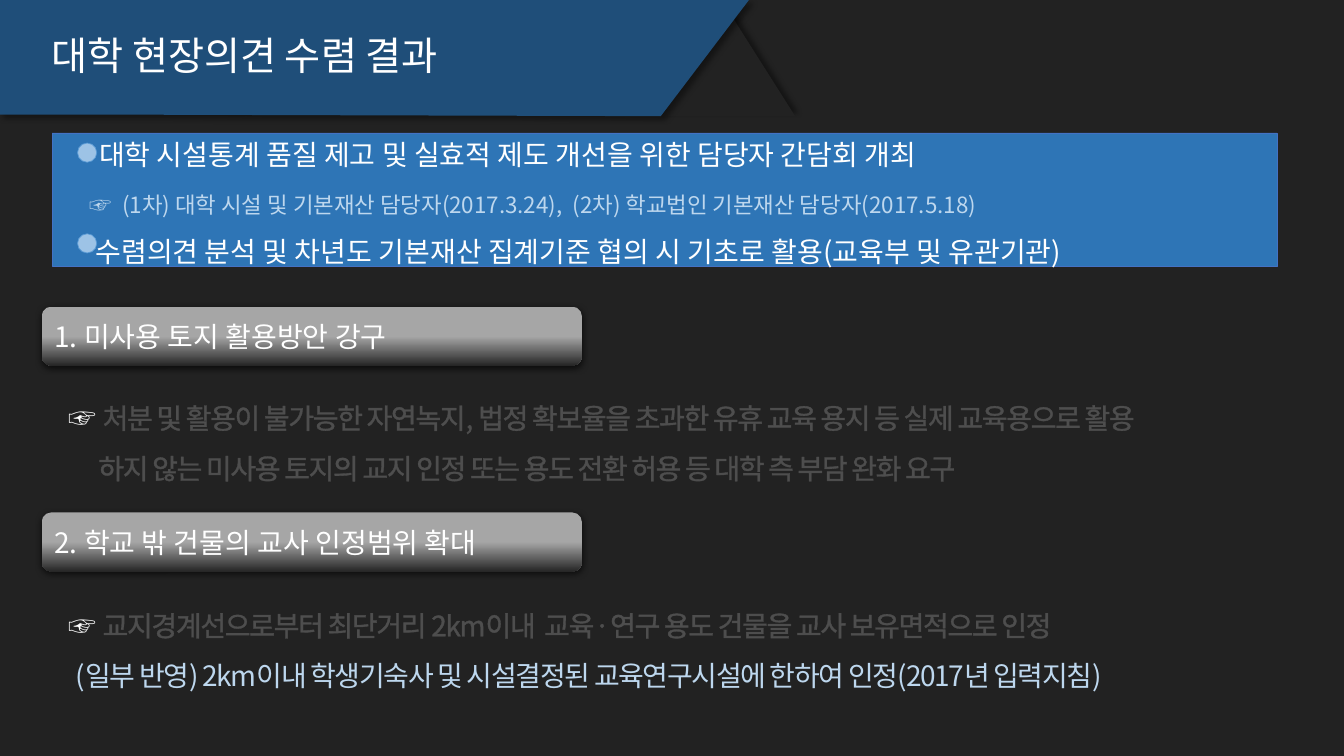
from dataclasses import dataclass
from lxml.etree import SubElement as Sub
from pptx import Presentation
from pptx.dml.color import RGBColor as RGB
from pptx.enum.shapes import MSO_SHAPE as Kind
from pptx.enum.text import MSO_ANCHOR as Anchor, MSO_AUTO_SIZE as Auto, PP_ALIGN as Align
from pptx.oxml.ns import qn
from pptx.util import Pt


@dataclass(frozen=True)
class Theme:
    font: str = "Noto Sans CJK KR"
    back: str = "222222"
    navy: str = "1F4E79"
    blue: str = "2E75B6"
    edge: str = "4472C4"
    dot: str = "9DC3E6"
    rim: str = "5B9BD5"
    pale: str = "BDD7EE"
    white: str = "FFFFFF"
    halo: str = "F2F2F2"
    gray: str = "A6A6A6"
    dark: str = "262626"
    head: int = 28
    body: int = 20
    note: int = 16


T = Theme()


def rgb(code):
    return RGB.from_string(code)


def tint(parent, code, alpha):
    color = Sub(parent, qn("a:srgbClr"), val=code)
    Sub(color, qn("a:alpha"), val=str(alpha * 1000))


def write(para, text, size=T.body, color=T.white, halo=False):
    """Add one run, optionally tight and with a faint outline."""
    run = para.add_run()
    run.text = text
    font = run.font
    font.size, font.name = Pt(size), T.font
    font.color.rgb = rgb(color)
    props = run._r.get_or_add_rPr()
    Sub(props, qn("a:ea"), typeface=T.font)
    if halo:
        props.set("spc", "-100")
        line = Sub(props, qn("a:ln"), w=str(Pt(0.75)))
        tint(Sub(line, qn("a:solidFill")), T.halo, 20)
        props.insert(0, line)


def lay(para, indent=0, space=1.0, before=0):
    para.alignment = Align.LEFT
    para.line_spacing = space
    para.space_before = Pt(before)
    para._p.get_or_add_pPr().set("marL", str(Pt(indent)))
    para._p.get_or_add_pPr().set("indent", "0")
    return para


def paint(shape, fill, line=None):
    shape.shadow.inherit = False
    if fill:
        shape.fill.solid()
        shape.fill.fore_color.rgb = rgb(fill)
    if line:
        shape.line.color.rgb = rgb(line)
        shape.line.width = Pt(0.5)
    else:
        shape.line.fill.background()


def shade(shape, alpha, blur, dist, angle):
    effects = shape._element.spPr.find(qn("a:effectLst"))
    cast = Sub(effects, qn("a:outerShdw"), blurRad=str(Pt(blur)), dist=str(Pt(dist)),
               dir=str(angle * 60000), algn="ctr", rotWithShape="0")
    tint(cast, "000000", alpha)


def place(slide, kind, x, y, w, h):
    return slide.shapes.add_shape(kind, Pt(x), Pt(y), Pt(w), Pt(h))


def banner(slide):
    fold = place(slide, Kind.ISOSCELES_TRIANGLE, 473, 8, 95, 75)
    paint(fold, T.back)
    shade(fold, 40, 4, 3, 315)
    pen = slide.shapes.build_freeform(0, 0, Pt(1))
    pen.add_line_segments([(535, 0), (472, 83), (112, 82), (0, 82)], close=True)
    flag = pen.convert_to_shape()
    paint(flag, T.navy)
    shade(flag, 40, 4, 3, 45)


def title(slide, text):
    head = slide.shapes.title
    head.left, head.top, head.width, head.height = Pt(29.5), Pt(18.7), Pt(335), Pt(41)
    frame = head.text_frame
    frame.word_wrap, frame.auto_size = False, Auto.SHAPE_TO_FIT_TEXT
    frame.vertical_anchor = Anchor.TOP
    write(lay(frame.paragraphs[0]), text, size=T.head)
    # Bring the title in front of the banner
    slide.shapes._spTree.append(head._element)


def summary(slide, rows):
    box = place(slide, Kind.RECTANGLE, 37.2, 95, 875, 95)
    paint(box, T.blue, T.edge)
    frame = box.text_frame
    frame.word_wrap, frame.vertical_anchor = True, Anchor.MIDDLE
    for i, (text, look, form) in enumerate(rows):
        para = frame.add_paragraph() if i else frame.paragraphs[0]
        write(lay(para, **form), text, **look)
    for y in (102.2, 167):
        dot = place(slide, Kind.FLOWCHART_CONNECTOR, 55.4, y, 13.7, 13.7)
        paint(dot, T.dot, T.rim)


def label(slide, y, text):
    bar = place(slide, Kind.ROUNDED_RECTANGLE, 29.7, y, 386, 42.3)
    paint(bar, None)
    bar.fill.gradient()
    bar.fill.gradient_angle = 270
    for stop, spot, code in zip(bar.fill.gradient_stops, (0.5, 1), (T.gray, T.dark)):
        stop.position, stop.color.rgb = spot, rgb(code)
    shade(bar, 63, 4.5, 1.5, 90)
    frame = bar.text_frame
    frame.word_wrap, frame.vertical_anchor = True, Anchor.MIDDLE
    write(lay(frame.paragraphs[0]), text)


def detail(slide, y, h, first, second, indent, color=T.white):
    box = slide.shapes.add_textbox(Pt(37.2), Pt(y), Pt(875), Pt(h))
    frame = box.text_frame
    frame.word_wrap, frame.auto_size = True, Auto.SHAPE_TO_FIT_TEXT
    para = lay(frame.paragraphs[0], indent=4.5, space=1.5)
    write(para, "☞ ")
    write(para, first, halo=True)
    para = lay(frame.add_paragraph(), indent=indent, space=1.5)
    write(para, second, color=color, halo=True)


def main():
    deck = Presentation()
    deck.slide_width, deck.slide_height = Pt(960), Pt(540)
    slide = deck.slides.add_slide(deck.slide_layouts[5])
    slide.background.fill.solid()
    slide.background.fill.fore_color.rgb = rgb(T.back)

    # Heading
    banner(slide)
    title(slide, "대학 현장의견 수렴 결과")

    # Overview box
    summary(slide, [
        ("대학 시설통계 품질 제고 및 실효적 제도 개선을 위한 담당자 간담회 개최",
         {}, dict(indent=26.5, space=1.2)),
        ("☞  (1차) 대학 시설 및 기본재산 담당자(2017.3.24),  (2차) 학교법인 기본재산 담당자(2017.5.18)",
         dict(size=T.note, color=T.pale), dict(indent=20, space=1.5, before=4.3)),
        ("수렴의견 분석 및 차년도 기본재산 집계기준 협의 시 기초로 활용(교육부 및 유관기관)",
         {}, dict(indent=24, space=1.5)),
    ])

    # Numbered opinions
    label(slide, 219, "1. 미사용 토지 활용방안 강구")
    detail(slide, 270.7, 80,
           "처분 및 활용이 불가능한 자연녹지, 법정 확보율을 초과한 유휴 교육 용지 등 실제 교육용으로 활용",
           "하지 않는 미사용 토지의 교지 인정 또는 용도 전환 허용 등 대학 측 부담 완화 요구", 26)
    label(slide, 366, "2. 학교 밖 건물의 교사 인정범위 확대")
    detail(slide, 419, 75,
           "교지경계선으로부터 최단거리 2km이내  교육·연구 용도 건물을 교사 보유면적으로 인정",
           "(일부 반영) 2km이내 학생기숙사 및 시설결정된 교육연구시설에 한하여 인정(2017년 입력지침)",
           10, T.pale)
    deck.save("out.pptx")


if __name__ == "__main__":
    main()
